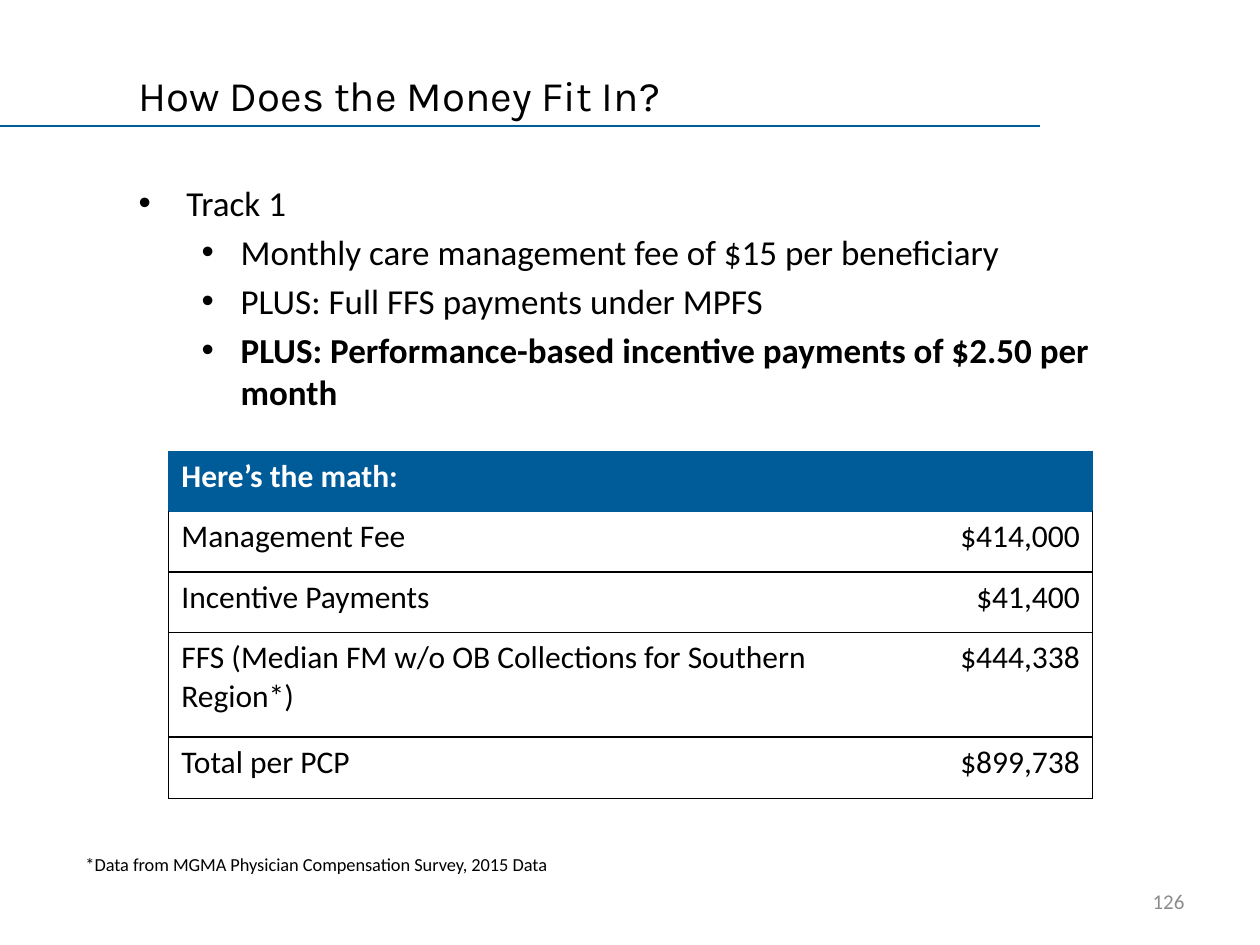
from lxml import etree
from pptx import Presentation
from pptx.dml.color import RGBColor
from pptx.enum.shapes import MSO_CONNECTOR
from pptx.enum.text import MSO_ANCHOR, MSO_AUTO_SIZE, PP_ALIGN
from pptx.oxml.ns import qn
from pptx.util import Inches, Pt

LEFT, RIGHT = PP_ALIGN.LEFT, PP_ALIGN.RIGHT
TOP, MIDDLE = MSO_ANCHOR.TOP, MSO_ANCHOR.MIDDLE
BLUE, HEADER_BLUE, BLACK, WHITE, GREY = "005B99", "005B99", "000000", "FFFFFF", "8C8C8C"

# Content
TITLE = "How Does the Money Fit In?"
BULLETS = [  # level, text, bold
    (0, "Track 1", False),
    (1, "Monthly care management fee of $15 per beneficiary", False),
    (1, "PLUS: Full FFS payments under MPFS", False),
    (1, "PLUS: Performance-based incentive payments of $2.50 per month", True),
]
INDENTS = {0: (0.38, -0.38), 1: (0.81, -0.31)}  # left margin, first line
MATH = [
    ("Here’s the math:", ""),
    ("Management Fee", "$414,000"),
    ("Incentive Payments", "$41,400"),
    ("FFS (Median FM w/o OB Collections for Southern Region*)", "$444,338"),
    ("Total per PCP", "$899,738"),
]
COLUMN_WIDTHS = [5.58, 1.75]
ROW_HEIGHTS = [0.48, 0.48, 0.48, 0.83, 0.49]
FOOTNOTE = "*Data from MGMA Physician Compensation Survey, 2015 Data"
PAGE_NUMBER = "126"


def color(value):
    return RGBColor.from_string(value)


def format_text(para, text, size, font="Calibri", fill=BLACK, bold=False, align=LEFT):
    para.alignment = align
    span = para.add_run()
    span.text = text
    values = {"size": Pt(size), "name": font, "bold": bold}
    for name, value in values.items():
        setattr(span.font, name, value)
    span.font.color.rgb = color(fill)


def place(shape, left, top, width, height, anchor):
    shape.left, shape.top = Inches(left), Inches(top)
    shape.width, shape.height = Inches(width), Inches(height)
    frame = shape.text_frame
    values = {"word_wrap": True, "auto_size": MSO_AUTO_SIZE.NONE, "vertical_anchor": anchor}
    for name, value in values.items():
        setattr(frame, name, value)
    return frame


def add_bullet(para, level):
    margin, first_line = INDENTS[level]
    para.level = level
    properties = para._p.get_or_add_pPr()
    properties.set("marL", str(Inches(margin)))
    properties.set("indent", str(Inches(first_line)))
    etree.SubElement(properties, qn("a:buFont")).set("typeface", "Arial")
    etree.SubElement(properties, qn("a:buChar")).set("char", "•")


def set_borders(cell, sides):
    properties = cell._tc.get_or_add_tcPr()
    for position, (side, value) in enumerate(sides.items()):
        line = etree.Element(qn("a:ln" + side), w=str(Pt(0.75)))
        fill = etree.SubElement(line, qn("a:solidFill" if value else "a:noFill"))
        if value:
            etree.SubElement(fill, qn("a:srgbClr")).set("val", value)
        properties.insert(position, line)


def add_math_table(page):
    table = page.shapes.add_table(
        len(MATH), len(COLUMN_WIDTHS), Inches(1.34), Inches(3.58),
        Inches(sum(COLUMN_WIDTHS)), Inches(sum(ROW_HEIGHTS))).table
    table.horz_banding = False
    for column, width in zip(table.columns, COLUMN_WIDTHS):
        column.width = Inches(width)
    for index, (row, height, values) in enumerate(zip(table.rows, ROW_HEIGHTS, MATH)):
        row.height = Inches(height)
        header = index == 0
        edge = HEADER_BLUE if header else BLACK
        for side, (cell, text) in enumerate(zip(row.cells, values)):
            cell.fill.solid()
            cell.fill.fore_color.rgb = color(HEADER_BLUE if header else WHITE)
            set_borders(cell, {
                "L": None if side else edge,
                "R": edge if side else None,
                "T": HEADER_BLUE if index < 2 else BLACK,
                "B": edge,
            })
            format_text(cell.text_frame.paragraphs[0], text, 18, bold=header,
                        fill=WHITE if header else BLACK, align=RIGHT if side else LEFT)


def main():
    deck = Presentation()
    deck.slide_width, deck.slide_height = Inches(10), Inches(7.5)
    page = deck.slides.add_slide(deck.slide_layouts[1])

    # Title and rule
    rule = page.shapes.add_connector(
        MSO_CONNECTOR.STRAIGHT, Inches(0), Inches(1), Inches(8.25), Inches(1))
    rule.line.color.rgb = color(BLUE)
    rule.line.width = Pt(0.75)
    etree.SubElement(rule._element.spPr, qn("a:effectLst"))
    frame = place(page.shapes.title, 1, 0.5, 7, 0.5, MIDDLE)
    format_text(frame.paragraphs[0], TITLE, 24, font="Karla")

    # Bullet list
    frame = place(page.placeholders[1], 1, 1.39, 7.98, 4.95, TOP)
    for index, (level, text, bold) in enumerate(BULLETS):
        para = frame.add_paragraph() if index else frame.paragraphs[0]
        para.space_before = Pt(4 if index else 0)
        add_bullet(para, level)
        format_text(para, text, 20, bold=bold)

    add_math_table(page)

    # Footnote and page number
    for text, area, anchor, style in [
        (FOOTNOTE, (0.58, 6.72, 4.42, 0.28), TOP, {"size": 10.5}),
        (PAGE_NUMBER, (7.17, 6.95, 2.33, 0.4), MIDDLE,
         {"size": 12, "fill": GREY, "align": RIGHT}),
    ]:
        box = page.shapes.add_textbox(0, 0, 0, 0)
        format_text(place(box, *area, anchor).paragraphs[0], text, **style)

    deck.save("out.pptx")


if __name__ == "__main__":
    main()
